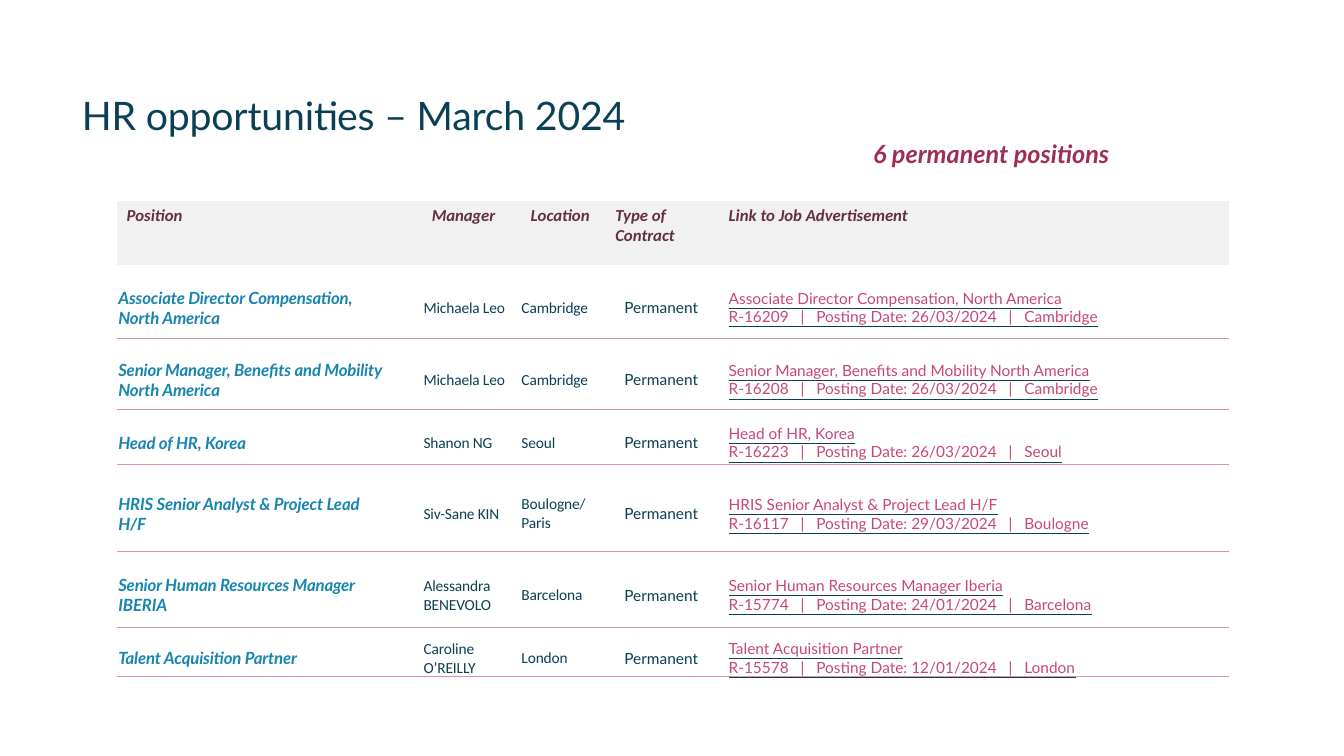
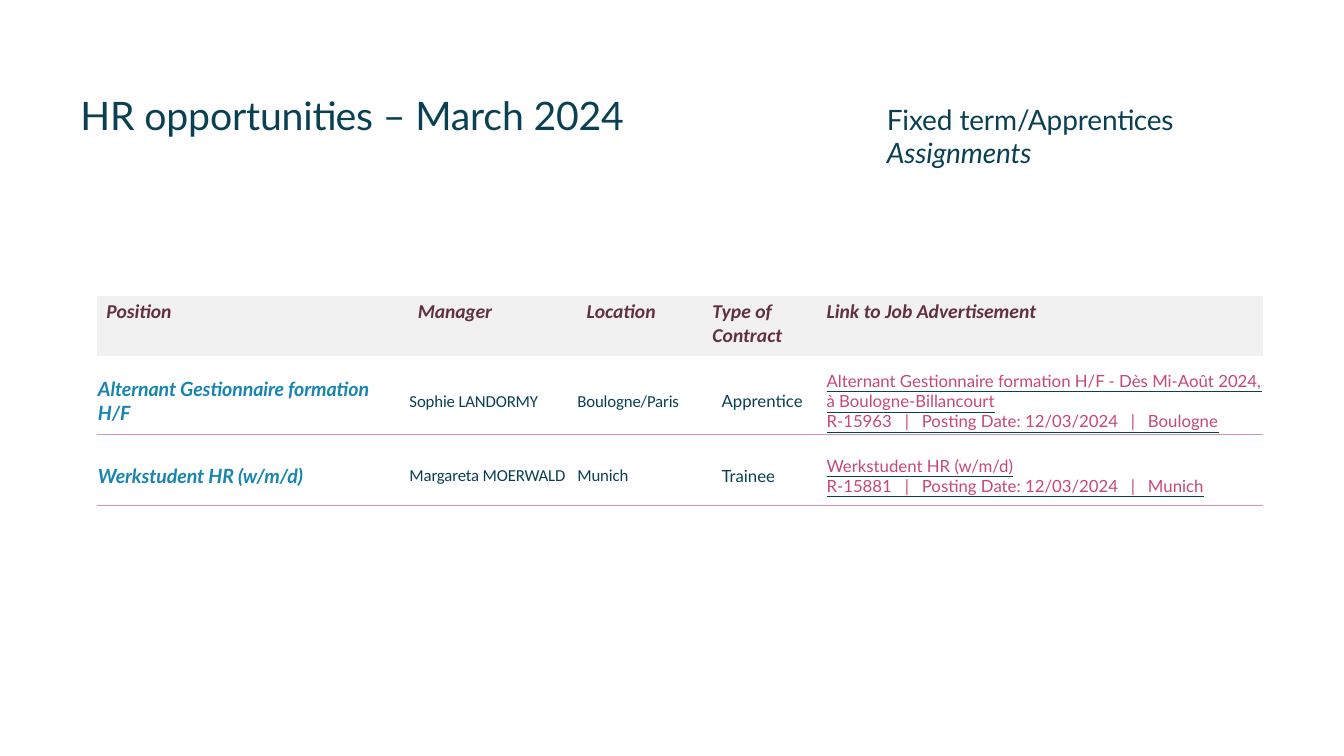
from dataclasses import dataclass
from typing import Any, NamedTuple

from pptx import Presentation
from pptx.dml.color import RGBColor
from pptx.enum.text import MSO_ANCHOR
from pptx.oxml import parse_xml
from pptx.oxml.ns import nsdecls, qn
from pptx.util import Pt

# Shared colours and fonts
NAVY, BLUE, PLUM, BERRY = "0A4054", "1785B0", "633043", "9D2F55"
LINK_PINK, RULE_PINK, HEADER_GREY = "C84874", "DE91AC", "F1F1F1"
HEADING_FONT, DETAIL_FONT = "Lato", "Calibri"
TIGHT = -10  # letter spacing in hundredths of a point


class Style(NamedTuple):
    font: str
    colour: str
    bold: bool = False
    italic: bool = False
    underline: bool = False
    spacing: int = 0


class Column(NamedTuple):
    heading: str
    heading_indent: float
    heading_spacing: int
    indent: float
    top_margin: float
    style: Style


class Opening(NamedTuple):
    position: str
    manager: str
    location: str
    contract: str
    advert: str
    reference: str


@dataclass
class OpeningsTable:
    left: float
    top: float
    widths: list[float]
    heights: list[float]
    heading_size: float
    detail_size: float
    openings: list[Opening]


TITLE = Style(HEADING_FONT, NAVY, spacing=TIGHT)
POSITION = Style(HEADING_FONT, BLUE, bold=True, italic=True, spacing=TIGHT)
DETAIL = Style(DETAIL_FONT, NAVY, spacing=TIGHT)
CONTRACT = Style(HEADING_FONT, NAVY)
LINK = Style(HEADING_FONT, LINK_PINK, underline=True)
HEADING = Style(DETAIL_FONT, PLUM, bold=True, italic=True)

COLUMNS = [
    Column("Position", 7, 0, 1, 8, POSITION),
    Column("Manager", 30, TIGHT, 24, 8.5, DETAIL),
    Column("Location", 10, 0, 3.5, 8.5, DETAIL),
    Column("Type of Contract", 7, 0, 13.5, 8.5, CONTRACT),
    Column("Link to Job Advertisement", 8, 0, 8, 8, LINK),
]

PERMANENT = OpeningsTable(
    83.5, 143.5, [195, 90.5, 63.5, 80, 365.5], [46, 52.5, 50.5, 39.5, 62, 54.5, 29], 12, 11,
    [
        Opening("Associate Director Compensation, North America", "Michaela Leo", "Cambridge",
                "Permanent", "Associate Director Compensation, North America",
                "R-16209   |   Posting Date: 26/03/2024   |   Cambridge"),
        Opening("Senior Manager, Benefits and Mobility North America", "Michaela Leo", "Cambridge",
                "Permanent", "Senior Manager, Benefits and Mobility North America",
                "R-16208   |   Posting Date: 26/03/2024   |   Cambridge"),
        Opening("Head of HR, Korea", "Shanon NG", "Seoul", "Permanent", "Head of HR, Korea",
                "R-16223   |   Posting Date: 26/03/2024   |   Seoul"),
        Opening("HRIS Senior Analyst & Project Lead H/F", "Siv-Sane KIN", "Boulogne/Paris",
                "Permanent", "HRIS Senior Analyst & Project Lead H/F",
                "R-16117   |   Posting Date: 29/03/2024   |   Boulogne"),
        Opening("Senior Human Resources Manager IBERIA", "Alessandra BENEVOLO", "Barcelona",
                "Permanent", "Senior Human Resources Manager Iberia",
                "R-15774   |   Posting Date: 24/01/2024   |   Barcelona"),
        Opening("Talent Acquisition Partner", "Caroline O’REILLY", "London", "Permanent",
                "Talent Acquisition Partner",
                "R-15578   |   Posting Date: 12/01/2024   |   London"),
    ],
)

FIXED_TERM = OpeningsTable(
    69, 211.5, [199.5, 140.5, 93, 80.5, 320], [43, 56, 50.5], 14, 12,
    [
        Opening("Alternant Gestionnaire formation H/F", "Sophie LANDORMY", "Boulogne/Paris",
                "Apprentice",
                "Alternant Gestionnaire formation H/F - Dès Mi-Août 2024, à Boulogne-Billancourt",
                "R-15963   |   Posting Date: 12/03/2024   |   Boulogne"),
        Opening("Werkstudent HR (w/m/d)", "Margareta MOERWALD", "Munich", "Trainee",
                "Werkstudent HR (w/m/d)",
                "R-15881   |   Posting Date: 12/03/2024   |   Munich"),
    ],
)


def rgb(value: str) -> RGBColor:
    return RGBColor.from_string(value)


def apply(target: Any, values: dict[str, Any]) -> None:
    for name, value in values.items():
        setattr(target, name, value)


def add_run(paragraph: Any, text: str, style: Style, size: float) -> None:
    run = paragraph.add_run()
    run.text = text
    apply(run.font, {"size": Pt(size), "bold": style.bold, "italic": style.italic,
                     "underline": style.underline, "name": style.font})
    run.font.color.rgb = rgb(style.colour)
    properties = run.font._element
    properties.set("spc", str(style.spacing))
    if style.underline:  # underline is darker than its text
        properties.find(qn("a:solidFill")).addnext(parse_xml(
            f'<a:uFill {nsdecls("a")}><a:solidFill><a:srgbClr val="{NAVY}"/></a:solidFill></a:uFill>'))


def add_text_frame(slide: Any, left: float, top: float, width: float, height: float) -> Any:
    frame = slide.shapes.add_textbox(Pt(left), Pt(top), Pt(width), Pt(height)).text_frame
    frame.word_wrap = True
    return frame


def add_title(slide: Any, left: float, top: float) -> Any:
    frame = add_text_frame(slide, left, top, 844.5, 64)
    apply(frame, {"margin_left": 0, "vertical_anchor": MSO_ANCHOR.BOTTOM})
    paragraph = frame.paragraphs[0]
    paragraph.line_spacing = 0.9
    add_run(paragraph, "HR opportunities – March 2024", TITLE, 28)
    return paragraph


def set_borders(cell: Any, ruled_sides: str) -> None:
    properties = cell._tc.get_or_add_tcPr()
    for side in "LRTB":
        fill = (f'<a:solidFill><a:srgbClr val="{RULE_PINK}"/></a:solidFill>'
                if side in ruled_sides else "<a:noFill/>")
        properties.append(parse_xml(
            f'<a:ln{side} {nsdecls("a")} w="{Pt(1)}">{fill}</a:ln{side}>'))


def fill_cell(cell: Any, lines: list[str], style: Style, size: float, indent: float,
              top_margin: float) -> None:
    apply(cell, {"margin_left": 0, "margin_right": 0, "margin_bottom": 0,
                 "margin_top": Pt(top_margin)})
    frame = cell.text_frame
    for number, line in enumerate(lines):
        paragraph = frame.add_paragraph() if number else frame.paragraphs[0]
        paragraph._p.get_or_add_pPr().set("marL", str(Pt(indent)))
        add_run(paragraph, line, style, size)


def add_openings(slide: Any, data: OpeningsTable) -> None:
    table = slide.shapes.add_table(
        len(data.heights), len(COLUMNS), Pt(data.left), Pt(data.top),
        Pt(sum(data.widths)), Pt(sum(data.heights))).table
    apply(table, {"first_row": False, "horz_banding": False})
    for column, width in zip(table.columns, data.widths):
        column.width = Pt(width)
    for row, height in zip(table.rows, data.heights):
        row.height = Pt(height)

    # Header band
    for index, column in enumerate(COLUMNS):
        cell = table.cell(0, index)
        set_borders(cell, "")
        cell.fill.solid()
        cell.fill.fore_color.rgb = rgb(HEADER_GREY)
        fill_cell(cell, [column.heading], HEADING._replace(spacing=column.heading_spacing),
                  data.heading_size, column.heading_indent, 3)

    # One ruled row per opening
    for row_number, opening in enumerate(data.openings, start=1):
        contents = [[text] for text in opening[:4]] + [[opening.advert, opening.reference]]
        for index, (column, lines) in enumerate(zip(COLUMNS, contents)):
            cell = table.cell(row_number, index)
            set_borders(cell, "TB" if row_number > 1 else "B")
            cell.fill.background()
            cell.vertical_anchor = MSO_ANCHOR.MIDDLE
            size = data.heading_size if column.style is POSITION else data.detail_size
            fill_cell(cell, lines, column.style, size, column.indent, column.top_margin)


def build_permanent(slide: Any) -> None:
    add_title(slide, 58.5, 39)
    add_openings(slide, PERMANENT)
    tally = add_text_frame(slide, 616.5, 95, 211.5, 29)
    add_run(tally.paragraphs[0], "6 permanent positions",
            Style(HEADING_FONT, BERRY, bold=True, italic=True), 18)


def build_fixed_term(slide: Any) -> None:
    title = add_title(slide, 57.5, 60.5)
    # Both lines of the category start at one tab stop
    title._p.get_or_add_pPr().append(parse_xml(
        f'<a:tabLst {nsdecls("a")}><a:tab pos="{Pt(576)}" algn="l"/></a:tabLst>'))
    add_run(title, "\tFixed term/Apprentices", TITLE, 20)
    title.add_line_break()
    add_run(title, "\tAssignments", TITLE._replace(italic=True), 20)
    add_openings(slide, FIXED_TERM)


def main() -> None:
    deck = Presentation()
    apply(deck, {"slide_width": Pt(960), "slide_height": Pt(540)})
    for build in (build_permanent, build_fixed_term):
        build(deck.slides.add_slide(deck.slide_layouts[6]))
    deck.save("out.pptx")


if __name__ == "__main__":
    main()
